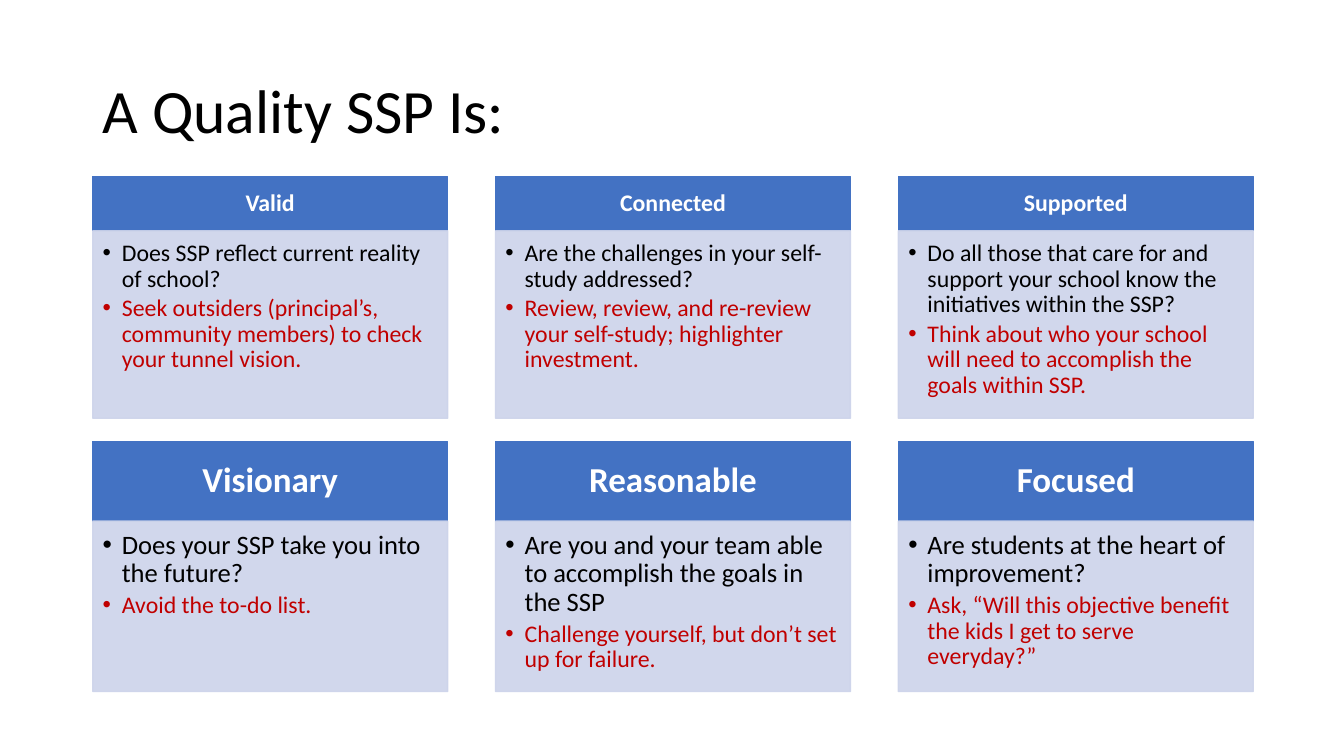
from dataclasses import dataclass

from lxml.etree import SubElement
from pptx import Presentation
from pptx.dml.color import RGBColor as Color
from pptx.enum.shapes import MSO_SHAPE as Shape
from pptx.enum.text import MSO_ANCHOR as Anchor, PP_ALIGN as Align
from pptx.oxml.ns import qn
from pptx.util import Inches, Pt

TITLE = "A Quality SSP Is:"
ROWS = [
    {
        "top": 1.75, "header_height": 0.54, "body_height": 1.86,
        "header_size": 17, "question_size": 17, "gap": 2.5,
        "header_insets": (0.13, 0.08, 0.13, 0.08),
        "cards": [
            ("Valid", "Does SSP reflect current reality of school?",
             "Seek outsiders (principal’s, community members) to check your tunnel vision."),
            ("Connected", "Are the challenges in your self-study addressed?",
             "Review, review, and re-review your self-study; highlighter investment."),
            ("Supported", "Do all those that care for and support your school know the initiatives within the SSP?",
             "Think about who your school will need to accomplish the goals within SSP."),
        ],
    },
    {
        "top": 4.38, "header_height": 0.79, "body_height": 1.69,
        "header_size": 25, "question_size": 19, "gap": 2.9,
        "header_insets": (0.19, 0.11, 0.19, 0.11),
        "cards": [
            ("Visionary", "Does your SSP take you into the future?",
             "Avoid the to-do list."),
            ("Reasonable", "Are you and your team able to accomplish the goals in the SSP",
             "Challenge yourself, but don’t set up for failure."),
            ("Focused", "Are students at the heart of improvement?",
             "Ask, “Will this objective benefit the kids I get to serve everyday?”"),
        ],
    },
]
LEFT, CARD_WIDTH, COLUMN_STEP = 0.92, 3.52, 3.995
BODY_INSETS = (0.1, 0.1, 0.13, 0.15)
BULLET_INDENT = 0.19


@dataclass(frozen=True)
class Theme:
    font: str = "Calibri"
    header: str = "4372C3"
    body: str = "CCD3EA"
    body_opacity: int = 90
    text: str = "000000"
    advice: str = "C00000"
    header_text: str = "FFFFFF"
    title_size: int = 44
    advice_size: int = 17


THEME = Theme()


def prepare_frame(shape, insets, anchor):
    frame = shape.text_frame
    frame.word_wrap = True
    frame.vertical_anchor = anchor
    (frame.margin_left, frame.margin_top,
     frame.margin_right, frame.margin_bottom) = map(Inches, insets)
    return frame


def write(paragraph, text, size, color, align=Align.LEFT, bold=False):
    paragraph.text = text
    paragraph.alignment = align
    paragraph.line_spacing = 0.9
    paragraph.font.name = THEME.font
    paragraph.font.size = Pt(size)
    paragraph.font.bold = bold
    paragraph.font.color.rgb = Color.from_string(color)


def add_bullet(paragraph, color):
    properties = paragraph._p.get_or_add_pPr()
    properties.set("marL", str(Inches(BULLET_INDENT)))
    properties.set("indent", str(-Inches(BULLET_INDENT)))
    bullet_color = SubElement(properties, qn("a:buClr"))
    SubElement(bullet_color, qn("a:srgbClr"), val=color)
    SubElement(properties, qn("a:buFont"), typeface="Arial")
    SubElement(properties, qn("a:buChar"), char="•")
    default_run = properties.find(qn("a:defRPr"))
    if default_run is not None:
        properties.append(default_run)


def add_panel(slide, left, top, height, color, opacity=100):
    panel = slide.shapes.add_shape(
        Shape.RECTANGLE, Inches(left), Inches(top), Inches(CARD_WIDTH), Inches(height))
    panel.shadow.inherit = False
    panel.line.width = Pt(1)
    for fill in (panel.fill, panel.line.fill):
        fill.solid()
        fill.fore_color.rgb = Color.from_string(color)
    if opacity < 100:
        for color_node in panel._element.spPr.iter(qn("a:srgbClr")):
            SubElement(color_node, qn("a:alpha"), val=str(opacity * 1000))
    return panel


def add_card(slide, left, row, heading, question, advice):
    header = add_panel(slide, left, row["top"], row["header_height"], THEME.header)
    header_frame = prepare_frame(header, row["header_insets"], Anchor.MIDDLE)
    write(header_frame.paragraphs[0], heading, row["header_size"],
          THEME.header_text, Align.CENTER, True)

    body = add_panel(slide, left, row["top"] + row["header_height"],
                     row["body_height"], THEME.body, THEME.body_opacity)
    body_frame = prepare_frame(body, BODY_INSETS, Anchor.TOP)
    question_paragraph = body_frame.paragraphs[0]
    write(question_paragraph, question, row["question_size"], THEME.text)
    add_bullet(question_paragraph, THEME.text)
    advice_paragraph = body_frame.add_paragraph()
    write(advice_paragraph, advice, THEME.advice_size, THEME.advice)
    advice_paragraph.space_before = Pt(row["gap"])
    add_bullet(advice_paragraph, THEME.advice)


def main():
    presentation = Presentation()
    presentation.slide_width = Inches(13.33)
    presentation.slide_height = Inches(7.5)
    slide = presentation.slides.add_slide(presentation.slide_layouts[6])

    title = slide.shapes.add_textbox(Inches(LEFT), Inches(0.4), Inches(11.5), Inches(1.45))
    title_frame = prepare_frame(title, (0.1, 0.05, 0.1, 0.05), Anchor.MIDDLE)
    write(title_frame.paragraphs[0], TITLE, THEME.title_size, THEME.text)

    for row in ROWS:
        for column, card in enumerate(row["cards"]):
            add_card(slide, LEFT + column * COLUMN_STEP, row, *card)

    presentation.save("out.pptx")


if __name__ == "__main__":
    main()
